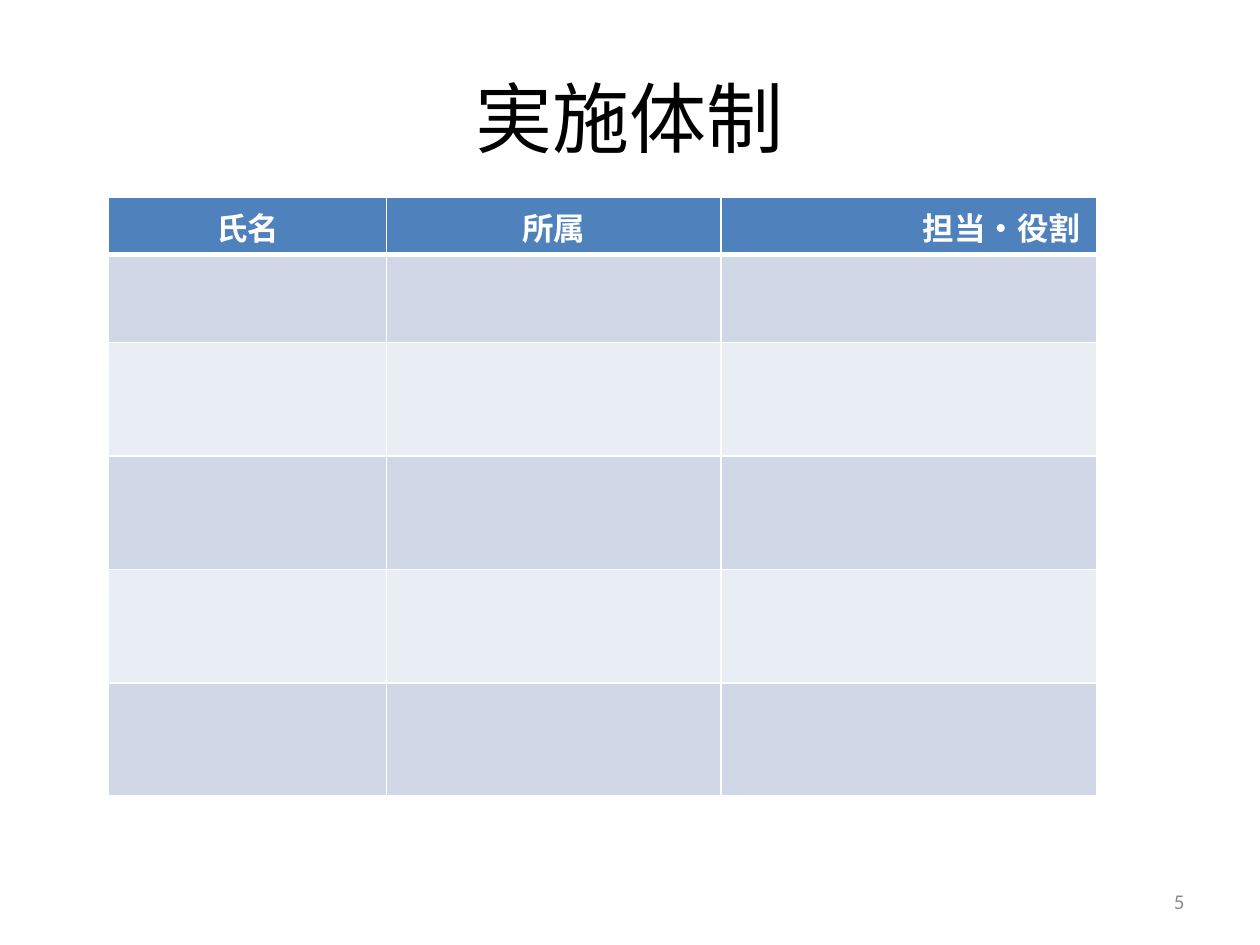
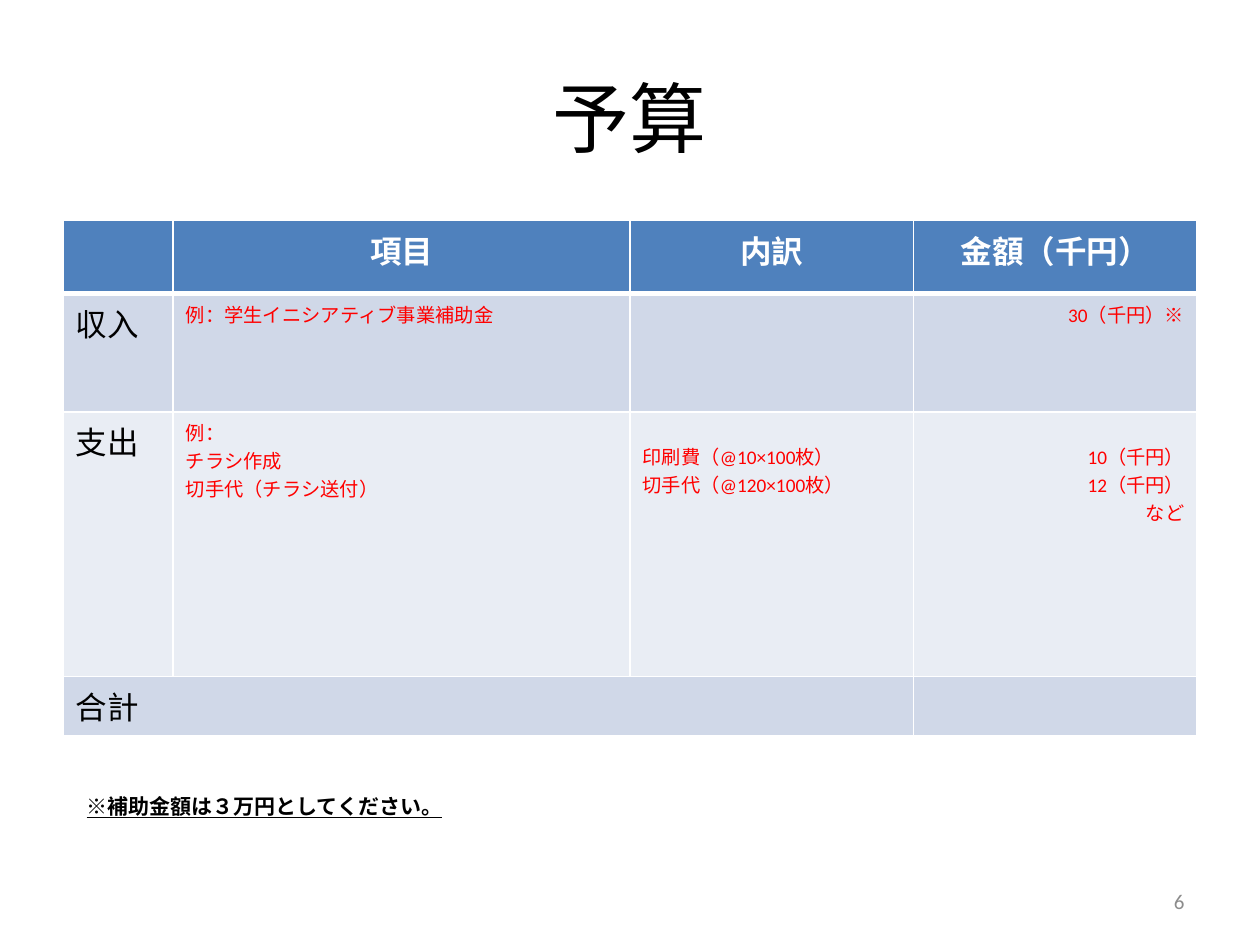
from dataclasses import dataclass

from lxml.etree import SubElement
from pptx import Presentation
from pptx.dml.color import RGBColor
from pptx.enum.text import MSO_ANCHOR, MSO_AUTO_SIZE, PP_ALIGN
from pptx.oxml.ns import qn
from pptx.util import Pt


@dataclass(frozen=True)
class Theme:
    font: str = "Calibri"
    text: str = "000000"
    example: str = "FF0000"
    muted: str = "8C8C8C"
    white: str = "FFFFFF"
    header: str = "4F81BD"
    bands: tuple = ("D0D8E8", "E9EDF4")
    title_size: float = 44
    table_size: float = 18
    small_size: float = 12
    example_size: float = 11
    thin_border: float = 1
    header_border: float = 3


@dataclass(frozen=True)
class Entry:
    """Text of one table cell; left and top are extra insets in points."""
    text: str
    align: PP_ALIGN = PP_ALIGN.LEFT
    example: bool = False
    left: float = 0
    top: float = 0


class Deck:
    def __init__(self, theme):
        self.theme = theme
        self.presentation = Presentation()
        self.presentation.slide_width = Pt(720)
        self.presentation.slide_height = Pt(540)
        self.slide = None

    def add_slide(self, title, number):
        layout = self.presentation.slide_layouts[6]
        self.slide = self.presentation.slides.add_slide(layout)
        self.add_text(title, (36, 21.6, 648, 90), self.theme.title_size,
                      self.theme.text, PP_ALIGN.CENTER, MSO_ANCHOR.MIDDLE)
        self.add_text(str(number), (516, 500.4, 168, 28.8), self.theme.small_size,
                      self.theme.muted, PP_ALIGN.RIGHT, MSO_ANCHOR.MIDDLE)

    def add_text(self, text, box, size, color, align, anchor):
        shape = self.slide.shapes.add_textbox(*map(Pt, box))
        frame = shape.text_frame
        frame.word_wrap = True
        frame.vertical_anchor = anchor
        self.set_text(frame, text, size, color, align)
        return shape

    def add_note(self, text, box):
        shape = self.add_text(text, box, self.theme.small_size, self.theme.text,
                              PP_ALIGN.LEFT, MSO_ANCHOR.TOP)
        shape.text_frame.auto_size = MSO_AUTO_SIZE.SHAPE_TO_FIT_TEXT
        font = shape.text_frame.paragraphs[0].font
        font.bold = font.underline = True

    def set_text(self, frame, text, size, color, align, bold=False):
        frame.text = text
        for paragraph in frame.paragraphs:
            paragraph.alignment = align
            font = paragraph.font
            font.name = self.theme.font
            font.size = Pt(size)
            font.bold = bold
            font.color.rgb = RGBColor.from_string(color)

    def add_table(self, left, top, widths, heights, entries):
        """Build a banded table; entries maps (row, column) to an Entry."""
        frame = self.slide.shapes.add_table(
            len(heights), len(widths), Pt(left), Pt(top),
            Pt(sum(widths)), Pt(sum(heights)))
        table = frame.table
        for column, width in zip(table.columns, widths):
            column.width = Pt(width)
        for row_index, (row, height) in enumerate(zip(table.rows, heights)):
            row.height = Pt(height)
            for column_index, cell in enumerate(row.cells):
                self.style_cell(cell, row_index)
                entry = entries.get((row_index, column_index))
                if entry:
                    self.fill_cell(cell, entry, row_index == 0)
        return table

    def style_cell(self, cell, row_index):
        theme = self.theme
        thick_side = {0: "lnB", 1: "lnT"}.get(row_index)
        properties = cell._tc.get_or_add_tcPr()
        for side in ("lnL", "lnR", "lnT", "lnB"):
            width = theme.header_border if side == thick_side else theme.thin_border
            line = SubElement(properties, qn(f"a:{side}"), w=str(Pt(width)))
            fill = SubElement(line, qn("a:solidFill"))
            SubElement(fill, qn("a:srgbClr"), val=theme.white)
        color = theme.bands[(row_index - 1) % 2] if row_index else theme.header
        cell.fill.solid()
        cell.fill.fore_color.rgb = RGBColor.from_string(color)

    def fill_cell(self, cell, entry, is_header):
        theme = self.theme
        size = theme.example_size if entry.example else theme.table_size
        color = (theme.white if is_header
                 else theme.example if entry.example else theme.text)
        self.set_text(cell.text_frame, entry.text, size, color, entry.align, is_header)
        cell.margin_left += Pt(entry.left)
        cell.margin_top += Pt(entry.top)


def add_team_slide(deck):
    deck.add_slide("実施体制", 5)
    deck.add_table(62, 113, (159, 191, 215), (32.4, 50.4, *[64.8] * 4), {
        (0, 0): Entry("氏名", PP_ALIGN.CENTER),
        (0, 1): Entry("所属", PP_ALIGN.CENTER),
        (0, 2): Entry("担当・役割", left=108),
    })


def add_budget_slide(deck):
    deck.add_slide("予算", 6)
    first_line = 13.7
    headings = ("項目", "内訳", "金額（千円）")
    entries = {(0, column): Entry(heading, PP_ALIGN.CENTER)
               for column, heading in enumerate(headings, 1)}
    entries |= {(row, 0): Entry(label)
                for row, label in enumerate(("収入", "支出", "合計"), 1)}
    entries |= {
        (1, 1): Entry("例：学生イニシアティブ事業補助金", example=True),
        (1, 3): Entry("30（千円）※", PP_ALIGN.RIGHT, example=True),
        (2, 1): Entry("例：\nチラシ作成\n切手代（チラシ送付）", example=True),
        (2, 2): Entry("印刷費（@10×100枚）\n切手代（@120×100枚）",
                      example=True, top=first_line),
        (2, 3): Entry("10（千円）\n12（千円）\nなど", PP_ALIGN.RIGHT,
                      example=True, top=first_line),
    }
    table = deck.add_table(36, 126, (63, 261, 162, 162),
                           (41.8, 67.7, 151.2, 33.8), entries)
    table.cell(3, 0).merge(table.cell(3, 2))
    deck.add_note("※補助金額は３万円としてください。", (42.5, 450, 255, 21.6))


def main():
    deck = Deck(Theme())
    add_team_slide(deck)
    add_budget_slide(deck)
    deck.presentation.save("out.pptx")


if __name__ == "__main__":
    main()
